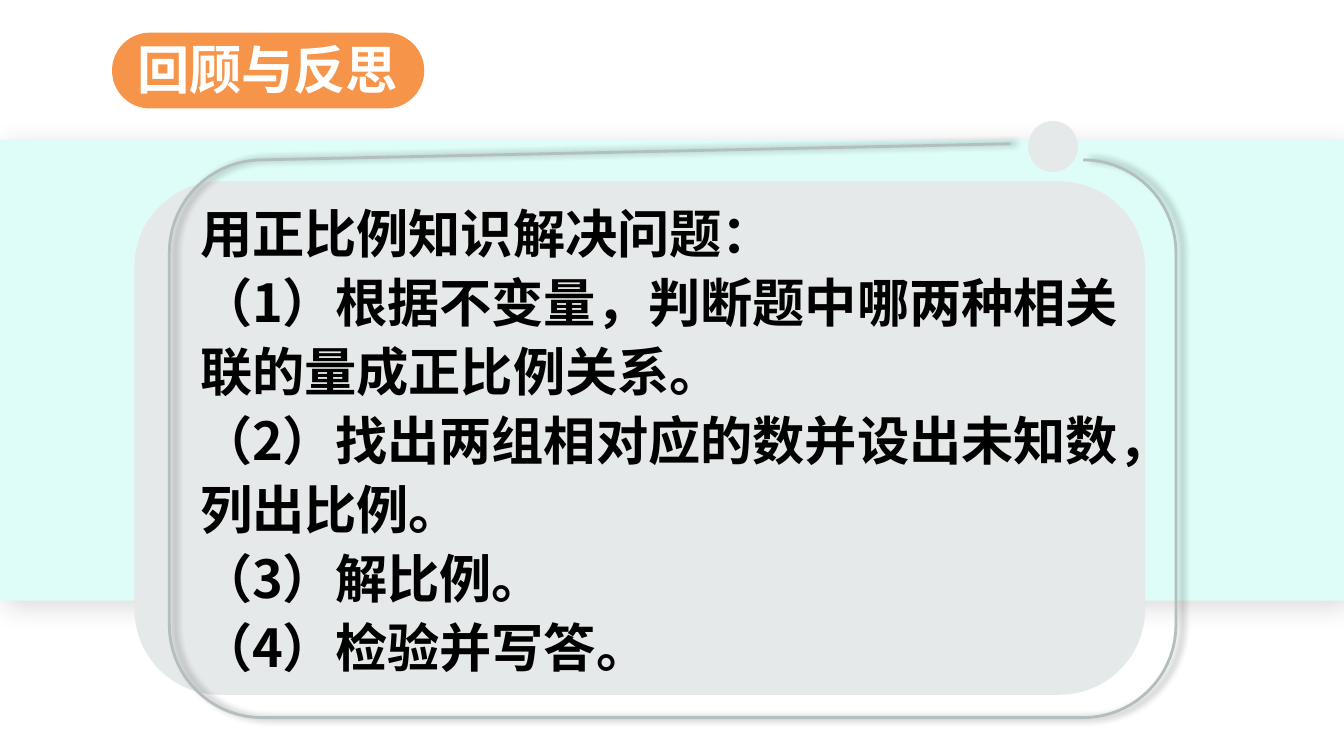
import math
import pptx
import pptx.util
import pptx.dml.color
import pptx.enum.shapes
import pptx.enum.text
import pptx.oxml
import pptx.oxml.ns

Inches = pptx.util.Inches
Pt = pptx.util.Pt
RGB = pptx.dml.color.RGBColor.from_string
SHAPE = pptx.enum.shapes.MSO_SHAPE
COLORS = {"band": "DEFDF8", "panel": "E6E9EA", "outline": "B3BEBF",
          "orange": "F6954A", "white": "FFFFFF", "black": "000000"}
FONT = "Noto Sans CJK SC"

deck = pptx.Presentation()
deck.slide_width, deck.slide_height = Inches(10), Inches(10 * 9 / 16)
slide = deck.slides.add_slide(deck.slide_layouts[5])


def add_filled(kind, left, top, width, height, color):
    shape = slide.shapes.add_shape(kind, Inches(left), Inches(top), Inches(width), Inches(height))
    shape.shadow.inherit = False
    shape.fill.solid()
    shape.fill.fore_color.rgb = RGB(COLORS[color])
    shape.line.fill.background()
    return shape


def style_text(frame, lines, color, spacing):
    frame.word_wrap = True
    frame.text = "\n".join(lines)
    for paragraph in frame.paragraphs:
        paragraph.alignment = pptx.enum.text.PP_ALIGN.LEFT
        paragraph.line_spacing = spacing
        paragraph.font.size = Pt(28)
        paragraph.font.bold = True
        paragraph.font.name = FONT
        paragraph.font.color.rgb = RGB(COLORS[color])
        for run in paragraph.runs:
            east_asian = pptx.oxml.parse_xml(
                f'<a:ea {pptx.oxml.ns.nsdecls("a")} typeface="{FONT}"/>')
            run.font._element.append(east_asian)


band = add_filled(SHAPE.RECTANGLE, 0, 1.04, 10, 3.43, "band")
add_filled(SHAPE.ROUNDED_RECTANGLE, 1, 1.35, 7.52, 3.82, "panel")

radius = 0.69
corners = [(8.06, 1.88, -90), (8.06, 4.65, 0), (1.95, 4.65, 90), (1.95, 1.88, 180)]
outline_points = []
for center_x, center_y, start in corners:
    for step in range(19):
        angle = math.radians(start + 5 * step)
        outline_points.append((Inches(center_x + radius * math.cos(angle)),
                               Inches(center_y + radius * math.sin(angle))))
outline_points.append((Inches(7.52), Inches(1.07)))
builder = slide.shapes.build_freeform(*outline_points[0])
builder.add_line_segments(outline_points[1:], close=False)
outline = builder.convert_to_shape()
outline.shadow.inherit = False
outline.fill.background()
outline.line.color.rgb = RGB(COLORS["outline"])
outline.line.width = Pt(1.5)

for shape, opacity, blur, distance, degrees in [(band, 15, 15, 5, 45), (outline, 40, 4, 3, 0)]:
    effects = shape._element.spPr.find(pptx.oxml.ns.qn("a:effectLst"))
    effects.append(pptx.oxml.parse_xml(
        f'<a:outerShdw {pptx.oxml.ns.nsdecls("a")} blurRad="{Pt(blur)}" dist="{Pt(distance)}" '
        f'dir="{degrees * 60000}" algn="ctr" rotWithShape="0"><a:srgbClr val="{COLORS["black"]}">'
        f'<a:alpha val="{opacity * 1000}"/></a:srgbClr></a:outerShdw>'))

add_filled(SHAPE.OVAL, 7.65, 0.9, 0.37, 0.38, "panel")

steps = slide.shapes.add_textbox(Inches(1.39), Inches(1.4), Inches(7.13), Inches(3.82))
style_text(steps.text_frame, [
    "用正比例知识解决问题：",
    "（1）根据不变量，判断题中哪两种相关联的量成正比例关系。",
    "（2）找出两组相对应的数并设出未知数，列出比例。",
    "（3）解比例。",
    "（4）检验并写答。",
], "black", 1.1)

title_pill = add_filled(SHAPE.ROUNDED_RECTANGLE, 0.84, 0.25, 2.31, 0.55, "orange")
title_pill.adjustments[0] = 0.5
title_pill.line.color.rgb = RGB(COLORS["orange"])
title_pill.line.width = Pt(1)

title = slide.shapes.title
title.left, title.top = Inches(0.92), Inches(0.23)
title.width, title.height = Inches(2.24), Inches(0.57)
title.text_frame.auto_size = pptx.enum.text.MSO_AUTO_SIZE.NONE
title.text_frame.vertical_anchor = pptx.enum.text.MSO_ANCHOR.TOP
style_text(title.text_frame, ["回顾与反思"], "white", 1.0)
slide.shapes._spTree.append(title._element)

deck.save("out.pptx")
